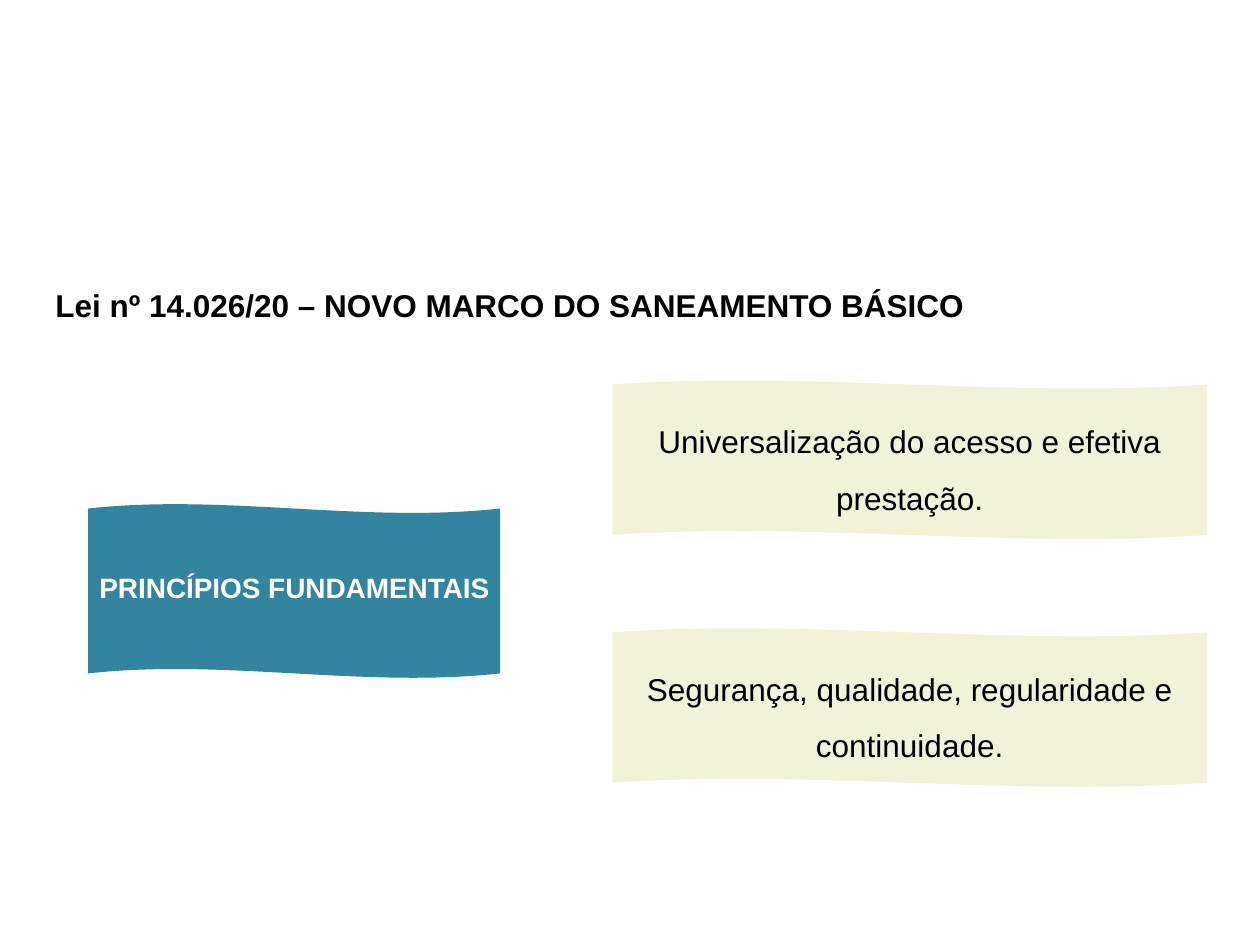
from dataclasses import dataclass

from pptx import Presentation
from pptx.dml.color import RGBColor
from pptx.enum.shapes import MSO_SHAPE
from pptx.enum.text import MSO_ANCHOR, MSO_AUTO_SIZE, PP_ALIGN
from pptx.shapes.autoshape import Shape
from pptx.slide import Slide
from pptx.text.text import TextFrame
from pptx.util import Pt


@dataclass(frozen=True)
class Theme:
    font: str = "Arial"
    dark: RGBColor = RGBColor(0x00, 0x00, 0x00)
    light: RGBColor = RGBColor(0xFF, 0xFF, 0xFF)
    teal: RGBColor = RGBColor(0x33, 0x84, 0x9F)
    cream: RGBColor = RGBColor(0xF1, 0xF2, 0xD7)
    body: float = 18
    label: float = 16


@dataclass(frozen=True)
class Box:
    left: float
    top: float
    width: float
    height: float

    def lengths(self) -> tuple[Pt, Pt, Pt, Pt]:
        return Pt(self.left), Pt(self.top), Pt(self.width), Pt(self.height)


THEME = Theme()
TITLE = Box(24.5, 159.8, 538.6, 72.7)
TOPIC = Box(50.4, 288, 235.4, 99.4)
LABEL = Box(49.7, 322.6, 238.3, 48.2)
FIRST = Box(349.9, 217.4, 339.8, 90.7)
PITCH = 141.6
RULES = (
    "Universalização do acesso e efetiva prestação.",
    "Segurança, qualidade, regularidade e continuidade.",
)


def write(frame: TextFrame, text: str, size: float, color: RGBColor,
          bold: bool = False, align: PP_ALIGN = PP_ALIGN.LEFT) -> None:
    frame.text = text
    line = frame.paragraphs[0]
    line.alignment = align
    font = line.runs[0].font
    font.name = THEME.font
    font.size = Pt(size)
    font.bold = bold
    font.color.rgb = color


def wave(slide: Slide, box: Box, color: RGBColor) -> Shape:
    shape = slide.shapes.add_shape(MSO_SHAPE.WAVE, *box.lengths())
    shape.adjustments[0] = 0.026
    shape.adjustments[1] = 0
    shape.shadow.inherit = False
    shape.fill.solid()
    shape.fill.fore_color.rgb = color
    shape.line.fill.background()
    return shape


def head(slide: Slide) -> None:
    title = slide.shapes.title
    title.left, title.top, title.width, title.height = TITLE.lengths()
    frame = title.text_frame
    frame.auto_size = MSO_AUTO_SIZE.NONE
    frame.vertical_anchor = MSO_ANCHOR.TOP
    write(frame, "Lei nº 14.026/20 – NOVO MARCO DO SANEAMENTO BÁSICO",
          THEME.body, THEME.dark, bold=True)


def topic(slide: Slide) -> None:
    wave(slide, TOPIC, THEME.teal)
    frame = slide.shapes.add_textbox(*LABEL.lengths()).text_frame
    frame.word_wrap = False
    write(frame, "PRINCÍPIOS FUNDAMENTAIS", THEME.label, THEME.light, bold=True)


def rule(slide: Slide, box: Box, text: str) -> None:
    frame = wave(slide, box, THEME.cream).text_frame
    frame.word_wrap = True
    frame.vertical_anchor = MSO_ANCHOR.MIDDLE
    write(frame, text, THEME.body, THEME.dark, align=PP_ALIGN.CENTER)
    frame.paragraphs[0].line_spacing = 1.5


def main() -> None:
    deck = Presentation()
    deck.slide_width, deck.slide_height = Pt(720), Pt(540)
    slide = deck.slides.add_slide(deck.slide_layouts.get_by_name("Title Only"))
    head(slide)
    topic(slide)
    for row, text in enumerate(RULES):
        box = Box(FIRST.left, FIRST.top + row * PITCH, FIRST.width, FIRST.height)
        rule(slide, box, text)
    deck.save("out.pptx")


if __name__ == "__main__":
    main()
